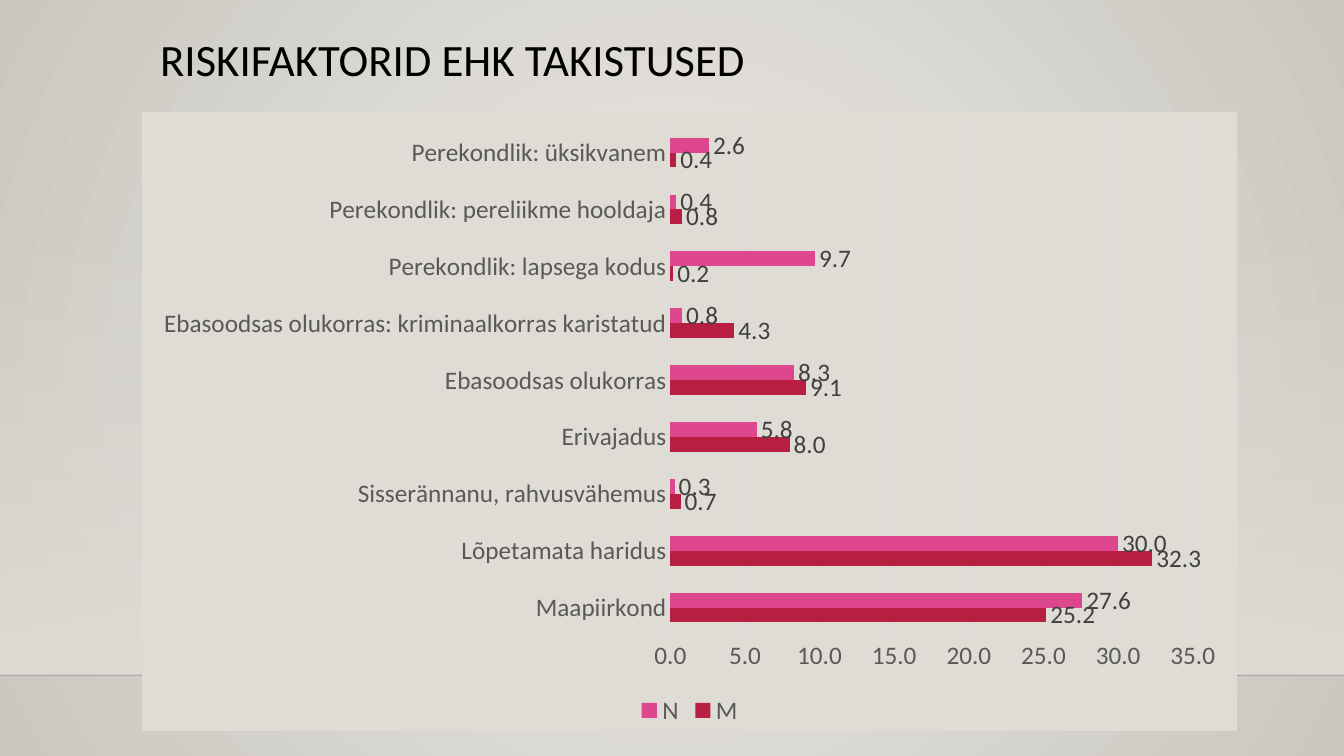
from lxml import etree
from pptx import Presentation
from pptx.chart.data import CategoryChartData
from pptx.dml.color import RGBColor
from pptx.enum.chart import XL_CHART_TYPE, XL_LABEL_POSITION, XL_LEGEND_POSITION, XL_TICK_MARK
from pptx.enum.shapes import MSO_CONNECTOR, MSO_SHAPE
from pptx.enum.text import MSO_ANCHOR, PP_ALIGN
from pptx.oxml import parse_xml
from pptx.oxml.ns import nsdecls, qn
from pptx.util import Inches, Pt

BAR_CLUSTERED = XL_CHART_TYPE.BAR_CLUSTERED
OUTSIDE_END = XL_LABEL_POSITION.OUTSIDE_END
LEGEND_BOTTOM = XL_LEGEND_POSITION.BOTTOM
NO_TICK = XL_TICK_MARK.NONE
STRAIGHT = MSO_CONNECTOR.STRAIGHT
RECTANGLE = MSO_SHAPE.RECTANGLE
TOP = MSO_ANCHOR.TOP
LEFT = PP_ALIGN.LEFT

WALL = "DFDBD5"
GRID = "D9D9D9"
AXIS_TEXT = "595959"
LABEL_TEXT = "404040"
BLACK = "000000"

CATEGORIES = [
    "Maapiirkond",
    "Lõpetamata haridus",
    "Sisserännanu, rahvusvähemus",
    "Erivajadus",
    "Ebasoodsas olukorras",
    "Ebasoodsas olukorras: kriminaalkorras karistatud",
    "Perekondlik: lapsega kodus",
    "Perekondlik: pereliikme hooldaja",
    "Perekondlik: üksikvanem",
]
SERIES = [
    ("M", "B71E42", [25.2, 32.3, 0.7, 8, 9.1, 4.3, 0.2, 0.8, 0.4]),
    ("N", "DE478E", [27.6, 30, 0.3, 5.8, 8.3, 0.8, 9.7, 0.4, 2.6]),
]


def color(value):
    return RGBColor.from_string(value)


class SlideBuilder:
    font_name = "Calibri"
    chart_size = 18

    def __init__(self, slide):
        self.slide = slide

    def style_font(self, font, size, font_color):
        values = {"name": self.font_name, "size": Pt(size), "bold": False}
        for name, value in values.items():
            setattr(font, name, value)
        font.color.rgb = color(font_color)

    def style_line(self, line, line_color, width):
        line.color.rgb = color(line_color)
        line.width = Pt(width)

    def gradient(self, parent, stops, direction):
        stop_xml = "".join(
            f'<a:gs pos="{position * 1000}"><a:srgbClr val="{stop_color}">'
            f'<a:alpha val="{alpha * 1000}"/></a:srgbClr></a:gs>'
            for position, stop_color, alpha in stops
        )
        fill = parse_xml(
            f'<a:gradFill {nsdecls("a")} rotWithShape="1">'
            f"<a:gsLst>{stop_xml}</a:gsLst>{direction}</a:gradFill>"
        )
        current = next(parent.iter(qn("a:gradFill")))
        current.getparent().replace(current, fill)

    def background(self, center, edge):
        self.slide.background.fill.gradient()
        self.gradient(
            self.slide.element,
            [(0, center, 100), (100, edge, 100)],
            '<a:path path="circle"><a:fillToRect l="50000" t="50000" r="50000" b="50000"/></a:path>',
        )

    def fading_wall(self, left, top, width, height):
        shape = self.slide.shapes.add_shape(
            RECTANGLE, Inches(left), Inches(top), Inches(width), Inches(height)
        )
        shape.shadow.inherit = False
        shape.line.fill.background()
        shape.fill.gradient()
        self.gradient(
            shape.element,
            [(0, WALL, 0), (100, WALL, 100)],
            '<a:lin ang="5400000" scaled="0"/>',
        )

    def floor_line(self, width, top, line_color, opacity):
        connector = self.slide.shapes.add_connector(
            STRAIGHT, 0, Inches(top), Inches(width), Inches(top)
        )
        self.style_line(connector.line, line_color, 1)
        properties = connector.element.spPr
        alpha = etree.SubElement(next(properties.iter(qn("a:srgbClr"))), qn("a:alpha"))
        alpha.set("val", str(opacity * 1000))
        etree.SubElement(properties, qn("a:effectLst"))

    def title(self, text, left, top, width, height):
        box = self.slide.shapes.add_textbox(
            Inches(left), Inches(top), Inches(width), Inches(height)
        )
        frame = box.text_frame
        frame.word_wrap = True
        frame.vertical_anchor = TOP
        paragraph = frame.paragraphs[0]
        paragraph.text = text
        paragraph.alignment = LEFT
        paragraph.line_spacing = 0.9
        self.style_font(paragraph.font, 32, BLACK)

    def chart_fill(self, chart):
        fill_xml = (
            f'<c:spPr {nsdecls("c", "a")}><a:solidFill><a:srgbClr val="{WALL}"/></a:solidFill>'
            "<a:ln><a:noFill/></a:ln></c:spPr>"
        )
        chart_element = chart.element.find(qn("c:chart"))
        chart_element.addnext(parse_xml(fill_xml))
        chart_element.find(qn("c:plotArea")).append(parse_xml(fill_xml))

    def bar_chart(self, left, top, width, height):
        data = CategoryChartData(number_format="0.0")
        data.categories = CATEGORIES
        for name, _, values in SERIES:
            data.add_series(name, values)
        chart = self.slide.shapes.add_chart(
            BAR_CLUSTERED, Inches(left), Inches(top), Inches(width), Inches(height), data
        ).chart
        self.style_font(chart.font, self.chart_size, BLACK)
        chart.has_title = False
        chart.has_legend = True
        chart.legend.position = LEGEND_BOTTOM
        chart.legend.include_in_layout = False
        self.style_font(chart.legend.font, self.chart_size, AXIS_TEXT)

        for axis in (chart.category_axis, chart.value_axis):
            axis.major_tick_mark = NO_TICK
            axis.minor_tick_mark = NO_TICK
            self.style_font(axis.tick_labels.font, self.chart_size, AXIS_TEXT)
        self.style_line(chart.category_axis.format.line, GRID, 0.75)
        value_axis = chart.value_axis
        value_axis.format.line.fill.background()
        value_axis.has_major_gridlines = True
        self.style_line(value_axis.major_gridlines.format.line, GRID, 0.75)
        value_axis.tick_labels.number_format = "0.0"
        value_axis.tick_labels.number_format_is_linked = False

        plot = chart.plots[0]
        plot.gap_width = 182
        plot.vary_by_categories = False
        label_values = {
            "show_value": True,
            "number_format": "0.0",
            "number_format_is_linked": False,
            "position": OUTSIDE_END,
        }
        for series, (_, bar_color, _) in zip(plot.series, SERIES):
            series.format.fill.solid()
            series.format.fill.fore_color.rgb = color(bar_color)
            series.invert_if_negative = False
            labels = series.data_labels
            for name, value in label_values.items():
                setattr(labels, name, value)
            self.style_font(labels.font, self.chart_size, LABEL_TEXT)
        self.chart_fill(chart)


def main():
    presentation = Presentation()
    presentation.slide_width = Inches(13.33)
    presentation.slide_height = Inches(7.5)
    builder = SlideBuilder(presentation.slides.add_slide(presentation.slide_layouts[6]))
    builder.background("ECEAE7", "CAC7C1")
    builder.fading_wall(0, 2.21, 13.33, 4.49)
    builder.floor_line(13.33, 6.7, "000001", 20)
    builder.title("RISKIFAKTORID EHK TAKISTUSED", 1.49, 0.33, 10.5, 1.15)
    builder.bar_chart(1.41, 1.11, 10.86, 6.14)
    presentation.save("out.pptx")


if __name__ == "__main__":
    main()
